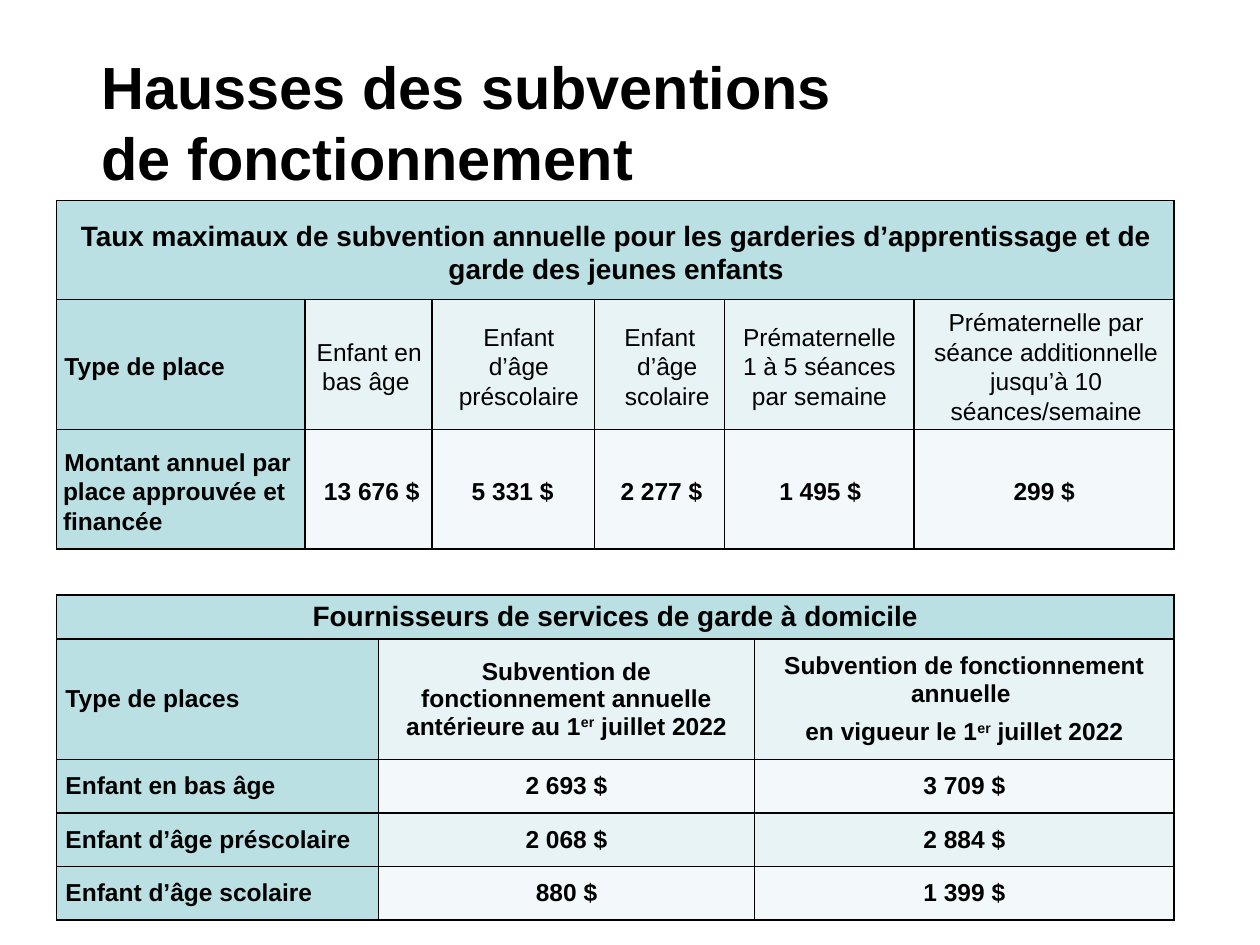
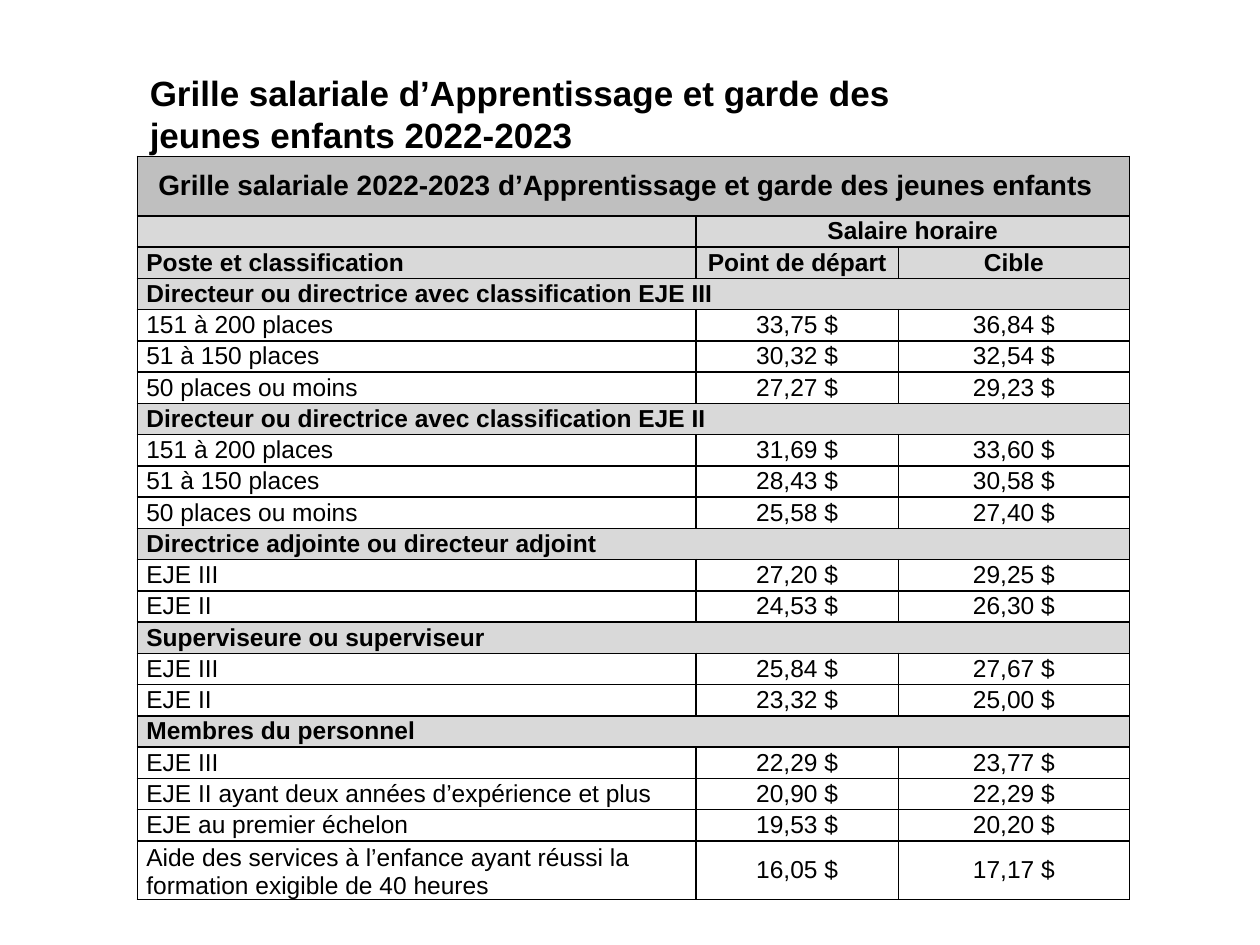
from lxml import etree
from pptx import Presentation
from pptx.dml.color import RGBColor
from pptx.enum import text
from pptx.oxml.ns import qn
from pptx.util import Cm, Pt

FONT = "Arial"
BLACK, WHITE = "000000", "FFFFFF"
TEAL, TEAL_LIGHT, TEAL_PALE = "BBE0E3", "E7F3F4", "F3F9FA"
GREY, GREY_LIGHT = "BFBFBF", "D9D9D9"
HEADER_SIZE, BODY_SIZE = 16, 14

# In cell texts, None continues the cell on its left and ^...^ is superscript.
CENTRE_GRANTS = [
    ["Taux maximaux de subvention annuelle pour les garderies d’apprentissage "
     "et de garde des jeunes enfants"] + [None] * 5,
    ["Type de place", "Enfant en bas âge ", "Enfant d’âge préscolaire", "Enfant d’âge scolaire",
     "Prématernelle\n1 à 5 séances par semaine",
     "Prématernelle par séance additionnelle jusqu’à 10 séances/semaine"],
    ["Montant annuel par place approuvée et financée",
     "13 676 $", "5 331 $", "2 277 $", "1 495 $", "299 $"],
]
# Left margin and first-line indent of each cell, in cm
CENTRE_INDENTS = [
    [(0.08, 0)],
    [(0.03, 0), (0.08, 0), (0.28, 0), (0.36, -0.3), (0.05, 0), (0.13, 0)],
    [(0, 0.03), (0.18, 0), (0.03, 0), (0.13, 0), (0.08, 0), (0.05, 0)],
]
HOME_GRANTS = [
    ["Fournisseurs de services de garde à domicile", None, None],
    ["Type de places",
     "Subvention de fonctionnement annuelle antérieure au 1^er^ juillet 2022",
     "Subvention de fonctionnement annuelle \nen vigueur le 1^er^ juillet 2022"],
    ["Enfant en bas âge", "2 693 $", "3 709 $"],
    ["Enfant d’âge préscolaire", "2 068 $", "2 884 $"],
    ["Enfant d’âge scolaire", "880 $", "1 399 $"],
]
WAGES = [
    ["Grille salariale 2022-2023 d’Apprentissage et garde des jeunes enfants", None, None],
    ["", "Salaire horaire", None],
    ["Poste et classification", "Point de départ ", "Cible"],
    ["Directeur ou directrice avec classification EJE III", None, None],
    ["151 à 200 places", "33,75 $", "36,84 $"],
    ["51 à 150 places", "30,32 $", "32,54 $"],
    ["50 places ou moins", "27,27 $", "29,23 $"],
    ["Directeur ou directrice avec classification EJE II", None, None],
    ["151 à 200 places", "31,69 $", "33,60 $"],
    ["51 à 150 places", "28,43 $", "30,58 $"],
    ["50 places ou moins", "25,58 $", "27,40 $"],
    ["Directrice adjointe ou directeur adjoint", None, None],
    ["EJE III", "27,20 $", "29,25 $"],
    ["EJE II", "24,53 $", "26,30 $"],
    ["Superviseure ou superviseur", None, None],
    ["EJE III", "25,84 $", "27,67 $"],
    ["EJE II", "23,32 $", "25,00 $"],
    ["Membres du personnel", None, None],
    ["EJE III", "22,29 $", "23,77 $"],
    ["EJE II ayant deux années d’expérience et plus", "20,90 $", "22,29 $"],
    ["EJE au premier échelon", "19,53 $", "20,20 $"],
    ["Aide des services à l’enfance ayant réussi la formation exigible de 40 heures",
     "16,05 $", "17,17 $"],
]


def rgb(colour):
    return RGBColor.from_string(colour)


def add_run(paragraph, words, size, bold):
    run = paragraph.add_run()
    run.text = words
    run.font.name, run.font.size, run.font.bold = FONT, Pt(size), bold
    run.font.color.rgb = rgb(BLACK)
    return run


def add_title(slide, lines, box, size):
    frame = slide.shapes.add_textbox(*map(Cm, box)).text_frame
    frame.word_wrap = True
    frame.vertical_anchor = text.MSO_ANCHOR.MIDDLE
    paragraph = frame.paragraphs[0]
    for number, line in enumerate(lines):
        if number:
            paragraph.add_line_break()
        add_run(paragraph, line, size, True)


def add_borders(cell):
    properties = cell._tc.get_or_add_tcPr()
    for side in ("lnL", "lnR", "lnT", "lnB"):
        line = etree.SubElement(properties, qn(f"a:{side}"), w=str(Pt(1)))
        fill = etree.SubElement(line, qn("a:solidFill"))
        etree.SubElement(fill, qn("a:srgbClr"), val=BLACK)


def write_cell(cell, words, size, bold, centred, indent, line_spacing):
    frame = cell.text_frame
    for number, line in enumerate(words.split("\n")):
        paragraph = frame.add_paragraph() if number else frame.paragraphs[0]
        paragraph.alignment = text.PP_ALIGN.CENTER if centred else text.PP_ALIGN.LEFT
        if line_spacing:
            paragraph.line_spacing = line_spacing
        else:
            paragraph.space_before = Pt(3 if number else 0)
            paragraph.space_after = Pt(3)
        properties = paragraph._p.get_or_add_pPr()
        for name, length in zip(("marL", "indent"), indent):
            properties.set(name, str(Cm(length)))
        if not line:
            etree.SubElement(paragraph._p, qn("a:endParaRPr"), sz=str(size * 100))
            continue
        for part_number, part in enumerate(line.split("^")):
            run = add_run(paragraph, part, size, bold)
            if part_number % 2:
                run._r.get_or_add_rPr().set("baseline", "30000")


def add_grid(slide, rows, corner, widths, heights, fill_of, bold_of,
             margins=(0.18, 0, 0.18, 0), indents=None, line_spacing=None):
    """Add a bordered table; fill_of and bold_of give the style of a (row, column)."""
    frame = slide.shapes.add_table(len(rows), len(widths), *map(Cm, corner),
                                   Cm(sum(widths)), Cm(sum(heights)))
    table = frame.table
    table.first_row = table.horz_banding = False
    for column, width in zip(table.columns, widths):
        column.width = Cm(width)
    for row, height in zip(table.rows, heights):
        row.height = Cm(height)
    for r, row in enumerate(rows):
        for c, words in enumerate(row):
            cell = table.cell(r, c)
            add_borders(cell)
            cell.fill.solid()
            cell.fill.fore_color.rgb = rgb(fill_of(r, c))
            cell.vertical_anchor = text.MSO_ANCHOR.MIDDLE
            cell.margin_left, cell.margin_top, cell.margin_right, cell.margin_bottom = map(Cm, margins)
            if words is None:
                continue
            last = c
            while last + 1 < len(row) and row[last + 1] is None:
                last += 1
            if last > c:
                cell.merge(table.cell(r, last))
            write_cell(cell, words, BODY_SIZE if r else HEADER_SIZE, bold_of(r, c),
                       r == 0 or c > 0, indents[r][c] if indents else (0, 0), line_spacing)
    return table


def teal_fill(row, column):
    if row == 0 or column == 0:
        return TEAL
    return TEAL_LIGHT if row % 2 else TEAL_PALE


def is_wage_heading(row):
    return row < 3 or WAGES[row][1] is None


def wage_fill(row, column):
    if row == 0:
        return GREY
    return GREY_LIGHT if is_wage_heading(row) else WHITE


def build_grants(slide):
    add_title(slide, ["Hausses des subventions ", "de fonctionnement"], (1.8, 0.86, 22.3, 3.18), 34)
    add_grid(slide, HOME_GRANTS, (1.14, 11.99), [6.49, 7.58, 8.46], [0.89, 2.43] + [1.08] * 3,
             teal_fill, lambda row, column: True)
    add_grid(slide, CENTRE_GRANTS, (1.14, 4.04), [5.01, 2.56, 3.27, 2.63, 3.82, 5.24],
             [2, 2.44, 2.41], teal_fill, lambda row, column: row != 1 or column == 0,
             (0.13, 0.08, 0.18, 0), CENTRE_INDENTS, 1.07)


def build_wages(slide):
    table = add_grid(slide, WAGES, (2.77, 3.15), [11.26, 4.08, 4.66],
                     [1.2] + [0.63] * (len(WAGES) - 2) + [1.12],
                     wage_fill, lambda row, column: is_wage_heading(row))
    table.cell(0, 0).margin_right = Cm(0.5)
    table.cell(len(WAGES) - 1, 0).vertical_anchor = text.MSO_ANCHOR.BOTTOM
    add_title(slide, ["Grille salariale d’Apprentissage et garde des jeunes enfants 2022-2023"],
              (2.77, 1.3, 17.6, 1.96), 20)


def main():
    presentation = Presentation()
    presentation.slide_width, presentation.slide_height = Cm(25.4), Cm(19.05)
    for build in (build_grants, build_wages):
        build(presentation.slides.add_slide(presentation.slide_layouts[6]))
    presentation.save("out.pptx")


if __name__ == "__main__":
    main()
